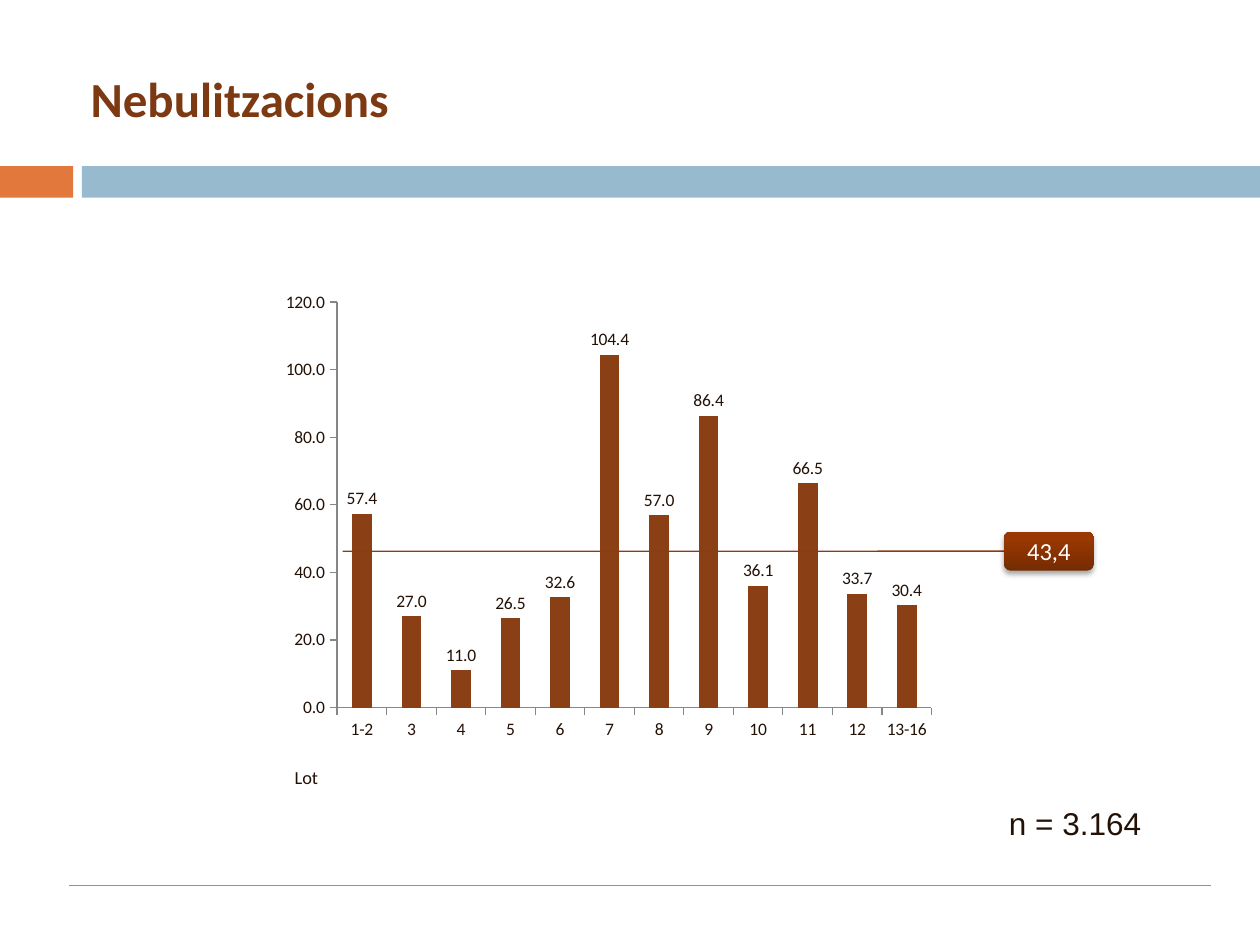
from copy import deepcopy
from dataclasses import dataclass

from lxml.etree import SubElement
from pptx import Presentation
from pptx.chart.data import CategoryChartData
from pptx.dml.color import RGBColor
from pptx.enum.chart import XL_CHART_TYPE as ChartType
from pptx.enum.chart import XL_LABEL_POSITION as LabelPosition
from pptx.enum.chart import XL_TICK_MARK as TickMark
from pptx.enum.shapes import MSO_CONNECTOR as Connector
from pptx.enum.shapes import MSO_SHAPE as Shape
from pptx.enum.text import MSO_ANCHOR as Anchor
from pptx.enum.text import MSO_AUTO_SIZE as AutoSize
from pptx.enum.text import PP_ALIGN as Align
from pptx.oxml import parse_xml
from pptx.oxml.ns import nsdecls, qn
from pptx.util import Pt

ORANGE = RGBColor(0xE2, 0x78, 0x3B)
BLUE = RGBColor(0x97, 0xBA, 0xCF)
TITLE_BROWN = RGBColor(0x7C, 0x39, 0x12)
BAR_BROWN = RGBColor(0x8B, 0x3F, 0x14)
MEAN_BROWN = RGBColor(0x8B, 0x3D, 0x11)
INK = RGBColor(0x23, 0x11, 0x06)
AXIS_GREY = RGBColor(0x86, 0x86, 0x86)
WHITE = RGBColor(0xFF, 0xFF, 0xFF)
BADGE_STOPS = (
    (0, RGBColor(0x75, 0x2B, 0x02)),
    (0.8, RGBColor(0x98, 0x38, 0x02)),
    (1, RGBColor(0x9B, 0x38, 0x00)),
)

NEBULISATIONS = {
    "1-2": 57.4, "3": 27.0, "4": 11.0, "5": 26.5, "6": 32.6, "7": 104.4,
    "8": 57.0, "9": 86.4, "10": 36.1, "11": 66.5, "12": 33.7, "13-16": 30.4,
}
PLOT_LAYOUT = {"x": 0.095, "y": 0.04, "w": 0.885, "h": 0.87}


@dataclass
class Box:
    left: float
    top: float
    width: float
    height: float

    def lengths(self) -> tuple:
        return Pt(self.left), Pt(self.top), Pt(self.width), Pt(self.height)


@dataclass
class Band:
    box: Box
    color: RGBColor


@dataclass
class Note:
    box: Box
    text: str
    font: dict


BANDS = (
    Band(Box(0, 95, 41.8, 18), ORANGE),
    Band(Box(46.8, 95, 673.2, 18), BLUE),
)
NOTES = (
    Note(Box(161.3, 434.2, 28.1, 20.2), "Lot", {"name": "Calibri", "size": Pt(10.5)}),
    Note(Box(569.5, 455.8, 90.7, 28.8), "n = 3.164", {"name": "Arial", "size": Pt(18)}),
)


def format_font(font, color: RGBColor, values: dict) -> None:
    for attribute, value in values.items():
        setattr(font, attribute, value)
    font.color.rgb = color


def add_band(slide, band: Band) -> None:
    rect = slide.shapes.add_shape(Shape.RECTANGLE, *band.box.lengths())
    rect.shadow.inherit = False
    rect.fill.solid()
    rect.fill.fore_color.rgb = band.color
    rect.line.fill.background()


def add_rule(slide, left: float, right: float, y: float, color: RGBColor):
    rule = slide.shapes.add_connector(Connector.STRAIGHT, Pt(left), Pt(y), Pt(right), Pt(y))
    rule.line.color.rgb = color
    rule.line.width = Pt(0.75)
    SubElement(rule._element.spPr, qn("a:effectLst"))
    return rule


def add_note(slide, note: Note) -> None:
    frame = slide.shapes.add_textbox(*note.box.lengths()).text_frame
    frame.word_wrap = False
    frame.auto_size = AutoSize.SHAPE_TO_FIT_TEXT
    frame.text = note.text
    format_font(frame.paragraphs[0].runs[0].font, INK, note.font)


def write_title(slide) -> None:
    title = slide.shapes.title
    title.left, title.top, title.width, title.height = Box(44.6, 22.3, 639.4, 67.7).lengths()
    frame = title.text_frame
    frame.text = "Nebulitzacions"
    frame.vertical_anchor = Anchor.MIDDLE
    heading = frame.paragraphs[0]
    heading.alignment = Align.LEFT
    format_font(heading.runs[0].font, TITLE_BROWN,
                {"name": "Calibri", "size": Pt(28), "bold": True})


def fix_plot_area(chart) -> None:
    """Pin the inner plot area to fractions of the chart's frame."""
    modes = "".join(f'<c:{side}Mode val="edge"/>' for side in "xy")
    places = "".join(f'<c:{side} val="{share}"/>' for side, share in PLOT_LAYOUT.items())
    layout = parse_xml(
        f'<c:layout {nsdecls("c")}><c:manualLayout><c:layoutTarget val="inner"/>'
        f"{modes}{places}</c:manualLayout></c:layout>"
    )
    plot_area = chart._chartSpace.chart.plotArea
    for old in plot_area.findall(qn("c:layout")):
        plot_area.remove(old)
    plot_area.insert(0, layout)


def add_lot_chart(slide) -> None:
    lots = CategoryChartData(number_format="0.0")
    lots.categories = list(NEBULISATIONS)
    lots.add_series("Series 1", list(NEBULISATIONS.values()))
    box = Box(156.2, 162, 383.8, 266.4)
    chart = slide.shapes.add_chart(ChartType.COLUMN_CLUSTERED, *box.lengths(), lots).chart
    chart.has_legend = False
    chart.has_title = False
    format_font(chart.font, INK, {"name": "Calibri", "size": Pt(10)})

    plot = chart.plots[0]
    plot.gap_width = 150
    plot.vary_by_categories = False
    plot.has_data_labels = True
    labels = plot.data_labels
    for attribute, value in {"show_value": True, "number_format": "0.0",
                             "number_format_is_linked": False,
                             "position": LabelPosition.OUTSIDE_END}.items():
        setattr(labels, attribute, value)
    bars = plot.series[0].format.fill
    bars.solid()
    bars.fore_color.rgb = BAR_BROWN

    for axis in (chart.category_axis, chart.value_axis):
        axis.has_major_gridlines = False
        axis.major_tick_mark = TickMark.OUTSIDE
        axis.minor_tick_mark = TickMark.NONE
        axis.format.line.color.rgb = AXIS_GREY
        axis.format.line.width = Pt(0.75)
    scale = chart.value_axis
    scale.minimum_scale, scale.maximum_scale, scale.major_unit = 0, 120, 20
    scale.tick_labels.number_format = "0.0"
    scale.tick_labels.number_format_is_linked = False
    fix_plot_area(chart)


def add_mean_badge(slide):
    badge = slide.shapes.add_shape(Shape.ROUNDED_RECTANGLE, *Box(573.8, 303.8, 51.1, 22.3).lengths())
    badge.fill.gradient()
    badge.fill.gradient_angle = 90
    stop_list = badge._element.spPr.find(qn("a:gradFill")).find(qn("a:gsLst"))
    stop_list.append(deepcopy(stop_list[-1]))
    for stop, (position, color) in zip(badge.fill.gradient_stops, BADGE_STOPS):
        stop.position = position
        stop.color.rgb = color
    badge.line.fill.background()

    badge.shadow.inherit = False
    effects = badge._element.spPr.find(qn("a:effectLst"))
    shadow = SubElement(effects, qn("a:outerShdw"), blurRad=str(Pt(3.1)), dist=str(Pt(1.8)),
                        dir="5400000", rotWithShape="0")
    shade = SubElement(shadow, qn("a:srgbClr"), val="000000")
    SubElement(shade, qn("a:alpha"), val="35000")

    frame = badge.text_frame
    frame.text = "43,4"
    frame.vertical_anchor = Anchor.MIDDLE
    mean = frame.paragraphs[0]
    mean.alignment = Align.CENTER
    format_font(mean.runs[0].font, WHITE, {"name": "Calibri", "size": Pt(14)})
    return badge


def main() -> None:
    deck = Presentation()
    deck.slide_width, deck.slide_height = Pt(720), Pt(540)
    slide = deck.slides.add_slide(deck.slide_layouts[5])
    for band in BANDS:
        add_band(slide, band)
    add_rule(slide, 39.6, 692, 506.2, ORANGE)
    write_title(slide)
    add_lot_chart(slide)
    mean_line = add_rule(slide, 195.8, 573.8, 315, MEAN_BROWN)
    mean_line.end_connect(add_mean_badge(slide), 1)
    for note in NOTES:
        add_note(slide, note)
    deck.save("out.pptx")


if __name__ == "__main__":
    main()
